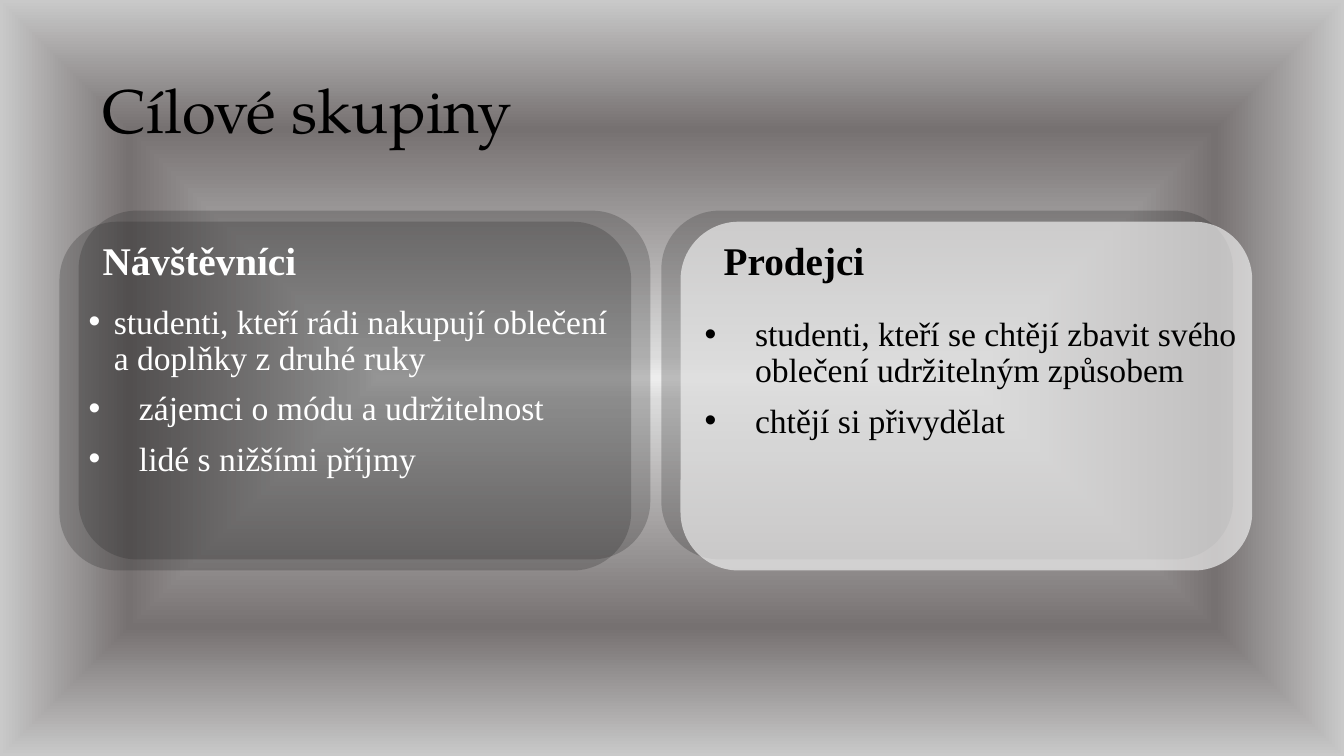
from lxml import etree
from pptx import Presentation
from pptx.dml.color import RGBColor
from pptx.enum import shapes, text
from pptx.oxml import parse_xml
from pptx.oxml.ns import nsdecls, qn
from pptx.util import Inches, Pt

BLACK = RGBColor(0, 0, 0)
WHITE = RGBColor(255, 255, 255)
DARK = RGBColor(0x26, 0x26, 0x26)
LIGHT = RGBColor(0xF2, 0xF2, 0xF2)
STOPS = [(0, "EDEDED"), (6, "DBDBDB"), (66, "767171"), (100, "C9C9C9")]

TITLE = "Cílové skupiny"
SERIF = "Times New Roman"
PANEL = (5.67, 3.46)
# Panels: left, top, colour, opacity in percent; items: text, indent
GROUPS = [
    dict(
        panels=[(0.78, 2.09, DARK, 25), (0.59, 2.2, DARK, 25)],
        head="Návštěvníci", head_box=(0.92, 1.97, 5.64, 0.9),
        items=[("studenti, kteří rádi nakupují oblečení a doplňky z druhé ruky", 0.25),
               ("zájemci o módu a udržitelnost", 0.5),
               ("lidé s nižšími příjmy", 0.5)],
        list_box=(0.78, 2.98, 5.39, 4.03), color=WHITE),
    dict(
        panels=[(6.56, 2.09, DARK, 25), (6.75, 2.2, LIGHT, 67)],
        head="Prodejci", head_box=(7.08, 1.97, 5.67, 0.9),
        items=[("studenti, kteří se chtějí zbavit svého oblečení udržitelným způsobem", 0.5),
               ("chtějí si přivydělat", 0.5)],
        list_box=(6.89, 3.1, 5.67, 4.03), color=BLACK),
]


def paint_back(slide):
    """Fill the background with a gradient running in from all four edges."""
    slide.background.fill.gradient()
    old = slide.element.find(".//" + qn("a:gradFill"))
    stops = "".join(f'<a:gs pos="{pos * 1000}"><a:srgbClr val="{color}"/></a:gs>'
                    for pos, color in STOPS)
    new = parse_xml(
        f'<a:gradFill {nsdecls("a")} rotWithShape="1"><a:gsLst>{stops}</a:gsLst>'
        '<a:path path="shape"><a:fillToRect l="50000" t="50000" r="50000" b="50000"/>'
        '</a:path></a:gradFill>')
    old.getparent().replace(old, new)


def add_panel(slide, left, top, color, alpha):
    box = map(Inches, (left, top, *PANEL))
    panel = slide.shapes.add_shape(shapes.MSO_SHAPE.ROUNDED_RECTANGLE, *box)
    panel.shadow.inherit = False
    panel.line.fill.background()
    panel.fill.solid()
    panel.fill.fore_color.rgb = color
    tint = panel.fill._xPr.find(".//" + qn("a:srgbClr"))
    etree.SubElement(tint, qn("a:alpha"), val=str(alpha * 1000))


def style(para, font, size, color, bold=False):
    para.alignment = text.PP_ALIGN.LEFT
    para.line_spacing = 0.9
    para.font.name = font
    para.font.size = Pt(size)
    para.font.color.rgb = color
    para.font.bold = bold


def add_frame(slide, box, anchor):
    frame = slide.shapes.add_textbox(*map(Inches, box)).text_frame
    frame.word_wrap = True
    frame.vertical_anchor = anchor
    return frame


def add_bullet(para, indent):
    props = para._p.get_or_add_pPr()
    props.set("marL", str(Inches(indent)))
    props.set("indent", str(-Inches(indent)))
    etree.SubElement(props, qn("a:buFont"), typeface="Arial")
    etree.SubElement(props, qn("a:buChar"), char="•")


def add_group(slide, group):
    for panel in group["panels"]:
        add_panel(slide, *panel)
    head = add_frame(slide, group["head_box"], text.MSO_ANCHOR.BOTTOM).paragraphs[0]
    head.text = group["head"]
    style(head, SERIF, 28, group["color"], bold=True)

    frame = add_frame(slide, group["list_box"], text.MSO_ANCHOR.TOP)
    for i, (item, indent) in enumerate(group["items"]):
        para = frame.add_paragraph() if i else frame.paragraphs[0]
        para.text = item
        add_bullet(para, indent)
        style(para, SERIF, 24, group["color"])
        if i:
            para.space_before = Pt(10)


def main():
    deck = Presentation()
    deck.slide_width, deck.slide_height = Inches(13.33), Inches(7.5)
    slide = deck.slides.add_slide(deck.slide_layouts[5])
    paint_back(slide)

    title = slide.shapes.title
    title.left, title.top, title.width, title.height = map(Inches, (0.92, 0.4, 11.5, 1.45))
    frame = title.text_frame
    frame.text = TITLE
    frame.auto_size = text.MSO_AUTO_SIZE.NONE
    frame.vertical_anchor = text.MSO_ANCHOR.MIDDLE
    style(frame.paragraphs[0], "TeX Gyre Pagella", 44, BLACK)

    for group in GROUPS:
        add_group(slide, group)
    deck.save("out.pptx")


if __name__ == "__main__":
    main()
